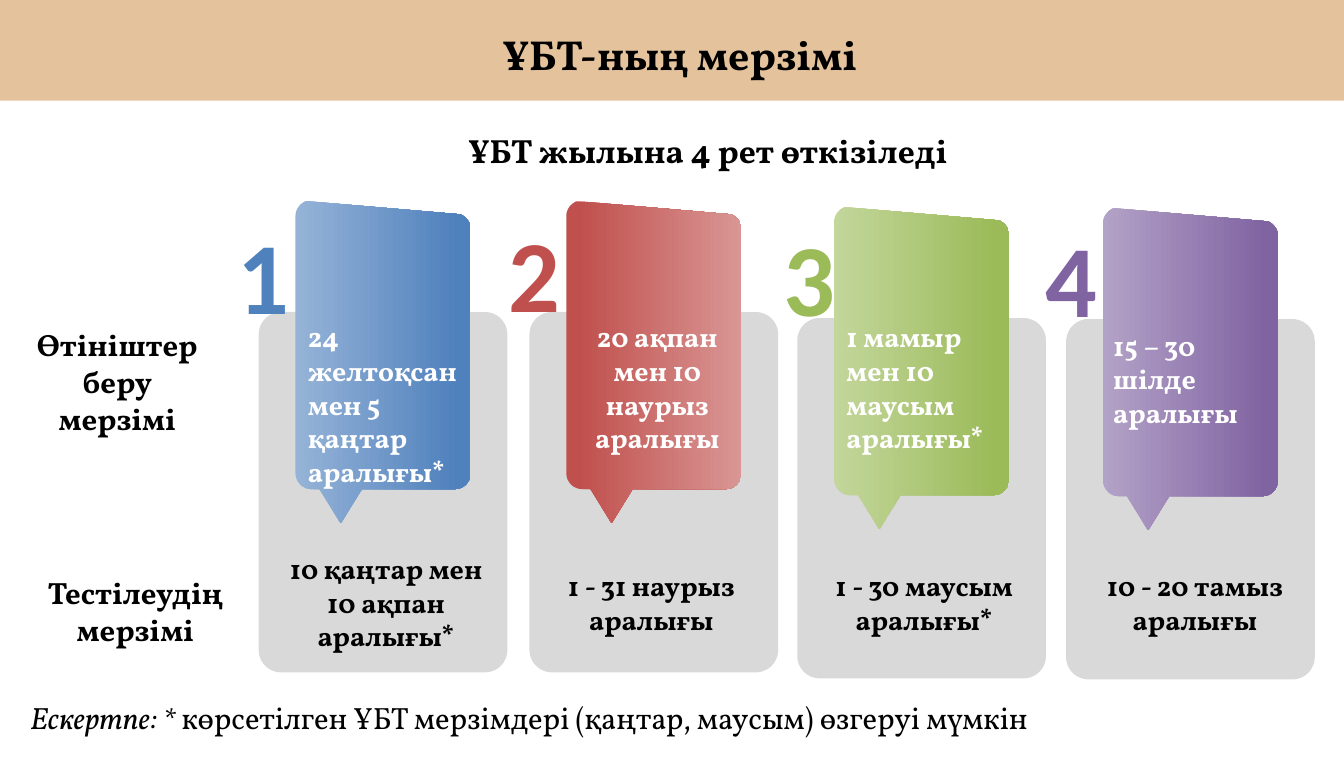
from dataclasses import dataclass

from pptx import Presentation
from pptx.dml.color import RGBColor as Rgb
from pptx.enum.shapes import MSO_SHAPE as Shape
from pptx.enum.text import MSO_ANCHOR as Anchor, PP_ALIGN as Align
from pptx.util import Inches, Pt


@dataclass(frozen=True)
class Theme:
    font: str = "Vollkorn"
    digit: str = "Calibri"
    black: str = "000000"
    white: str = "FFFFFF"
    band: str = "E4C29C"
    card: str = "D9D9D9"
    title: int = 30
    head: int = 24
    label: int = 22
    body: int = 20
    number: int = 73


theme = Theme()


def style(frame, size, color=theme.black, align=Align.CENTER, font=theme.font, bold=True):
    para = frame.paragraphs[0]
    para.alignment = align
    for run in para.runs:
        run.font.name = font
        run.font.size = Pt(size)
        run.font.bold = bold
        run.font.color.rgb = Rgb.from_string(color)


def add_text(box, text, size, wrap=True, **look):
    """Place a text box at box (left, top, width, height in inches)."""
    frame = slide.shapes.add_textbox(*map(Inches, box)).text_frame
    frame.text = text
    frame.word_wrap = wrap
    style(frame, size, **look)
    return frame


deck = Presentation()
deck.slide_width, deck.slide_height = Inches(13.35), Inches(7.68)
slide = deck.slides.add_slide(deck.slide_layouts[5])
title = slide.shapes.title

# Title band, with the title in front of it
band = slide.shapes.add_shape(
    Shape.RECTANGLE, Inches(-0.02), Inches(-0.02), Inches(13.39), Inches(1.02))
band.fill.solid()
band.fill.fore_color.rgb = Rgb.from_string(theme.band)
band.line.fill.background()
band.shadow.inherit = False
slide.shapes._spTree.append(title._element)
title.left, title.top = Inches(4.86), Inches(0.23)
title.width, title.height = Inches(3.79), Inches(0.61)
frame = title.text_frame
frame.text = "ҰБТ-ның мерзімі"
frame.word_wrap = False
frame.vertical_anchor = Anchor.TOP
style(frame, theme.title)

add_text((4.47, 1.24, 5.12, 0.5), "ҰБТ жылына 4 рет өткізіледі", theme.head, wrap=False)

# Callout outline: a pair is a corner point, four pairs are a rounded corner
outline = [
    [(1.64, 0.13), (1.7, 0.16), (1.74, 0.21), (1.74, 0.28)],
    [(1.74, 2.7), (1.74, 2.79), (1.67, 2.86), (1.58, 2.86)],
    [(0.66, 2.86)], [(0.45, 3.2)], [(0.24, 2.86)],
    [(0.16, 2.86), (0.07, 2.86), (0, 2.79), (0, 2.7)],
    [(0, 0.15), (0, 0.08), (0.04, 0.03), (0.1, 0)],
]
steps = 8
points = []
for part in outline:
    if len(part) == 1:
        points += part
        continue
    for step in range(steps + 1):
        t = step / steps
        rates = ((1 - t) ** 3, 3 * t * (1 - t) ** 2, 3 * t * t * (1 - t), t ** 3)
        points.append(tuple(sum(r * p[axis] for r, p in zip(rates, part)) for axis in (0, 1)))

# Left, top, gradient stops (position, colour), main colour
cards = [
    (2.57, 3.1, (0, "95B3D7"), (0.93, "4F81BD"), "4F81BD"),
    (5.26, 3.1, (0.07, "C0504D"), (1, "D99694"), "C0504D"),
    (7.92, 3.16, (0, "C3D69B"), (0.93, "9BBB59"), "9BBB59"),
    (10.59, 3.17, (0, "B3A2C7"), (0.93, "8064A2"), "8064A2"),
]
# Application text, its box and alignment; test text and its box; number place
periods = [
    ("24 желтоқсан мен 5 қаңтар аралығы*", (2.96, 3.13, 1.74, 1.78), Align.LEFT,
     "10 қаңтар мен 10 ақпан аралығы*", (2.63, 5.43, 2.41, 1.11), (2.26, 2.06)),
    ("20 ақпан мен 10 наурыз аралығы", (5.56, 3.13, 1.94, 1.45), Align.CENTER,
     "1 - 31 наурыз аралығы", (5.28, 5.6, 2.38, 0.78), (4.95, 2.04)),
    ("1 мамыр мен 10 маусым аралығы*", (8.31, 3.13, 1.74, 1.45), Align.LEFT,
     "1 - 30 маусым аралығы*", (8, 5.6, 2.36, 0.78), (7.68, 2.08)),
    ("15 – 30 шілде аралығы", (10.96, 3.21, 1.74, 1.11), Align.LEFT,
     "10 - 20 тамыз аралығы", (10.59, 5.6, 2.56, 0.78), (10.29, 2.09)),
]

for number, (card, period) in enumerate(zip(cards, periods), 1):
    left, top, start, end, color = card
    apply, place, align, test, below, corner = period

    panel = slide.shapes.add_shape(
        Shape.ROUNDED_RECTANGLE, Inches(left), Inches(top), Inches(2.47), Inches(3.58))
    panel.adjustments[0] = 0.09
    panel.fill.solid()
    panel.fill.fore_color.rgb = Rgb.from_string(theme.card)

    x, y = left + 0.365, top - 1.1
    pen = slide.shapes.build_freeform(Inches(x + 0.13), Inches(y))
    pen.add_line_segments([(Inches(x + dx), Inches(y + dy)) for dx, dy in points])
    callout = pen.convert_to_shape()
    callout.fill.gradient()
    callout.fill.gradient_angle = 0
    for stop, (spot, tint) in zip(callout.fill.gradient_stops, (start, end)):
        stop.position = spot
        stop.color.rgb = Rgb.from_string(tint)
    for shape in (panel, callout):
        shape.line.fill.background()
        shape.shadow.inherit = False

    add_text(place, apply, theme.body, color=theme.white, align=align)
    add_text(below, test, theme.body)
    add_text((*corner, 0.61, 1.58), str(number), theme.number, wrap=False,
             color=color, align=Align.LEFT, font=theme.digit)

add_text((0.24, 3.19, 1.85, 1.21), "Өтініштер беру мерзімі", theme.label)
add_text((0.12, 5.65, 2.45, 0.84), "Тестілеудің мерзімі", theme.label)

note = add_text((0.2, 6.89, 13.19, 0.47), "Ескертпе: * ", theme.label,
                align=Align.JUSTIFY, bold=False)
note.paragraphs[0].runs[0].font.italic = True
rest = note.paragraphs[0].add_run()
rest.text = "көрсетілген ҰБТ мерзімдері (қаңтар, маусым) өзгеруі мүмкін"
style(note, theme.label, align=Align.JUSTIFY, bold=False)

deck.save("out.pptx")
